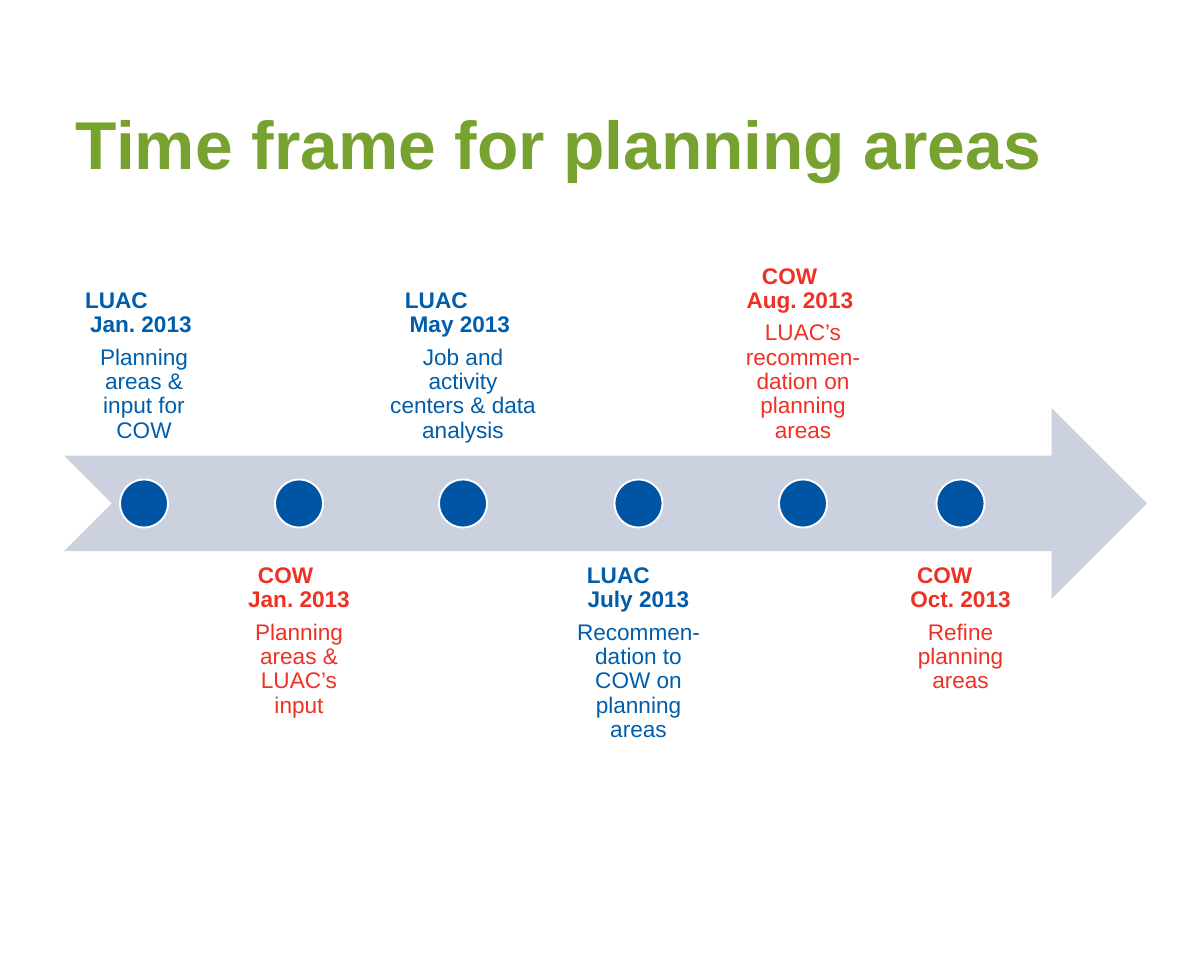
from pptx import Presentation
from pptx.dml.color import RGBColor
from pptx.enum.shapes import MSO_SHAPE
from pptx.enum.text import MSO_ANCHOR, PP_ALIGN
from pptx.util import Pt

PX = 13506  # EMU per px
GREEN = RGBColor(0x78, 0xA2, 0x2F)
BLUE = RGBColor(0x00, 0x5D, 0xAA)
RED = RGBColor(0xEE, 0x31, 0x24)
DOT_BLUE = RGBColor(0x00, 0x54, 0xA4)
PALE = RGBColor(0xCC, 0xD1, 0xE0)
WHITE = RGBColor(0xFF, 0xFF, 0xFF)

ARROW_TOP, ARROW_H, DOT = 408, 191, 48
LABEL_H, ABOVE, BELOW = 191, 265, 551

# left, width, group indent, group, date, task
EVENTS = [
    (65, 158, 7, "LUAC", "Jan. 2013 ", "Planning areas & input for COW"),
    (227, 144, 18, "COW", "Jan. 2013", "Planning areas & LUAC’s input"),
    (376, 174, 16, "LUAC", "May 2013 ", "Job and activity centers & data analysis"),
    (554, 169, 20, "LUAC", "July 2013", "Recommen-dation to COW on planning areas"),
    (728, 150, 21, "COW", "Aug. 2013 ", "LUAC’s recommen-dation on planning areas"),
    (883, 155, 21, "COW", "Oct. 2013", "Refine planning areas"),
]


def add_box(x, y, w, h, inset_x, inset_y):
    tf = s.shapes.add_textbox(x * PX, y * PX, w * PX, h * PX).text_frame
    tf.word_wrap = True
    tf.margin_left = tf.margin_right = inset_x * PX
    tf.margin_top = tf.margin_bottom = inset_y * PX
    return tf


def add_run(p, text, size, color, bold):
    r = p.add_run()
    r.text = text
    r.font.name = "Arial"
    r.font.size = Pt(size)
    r.font.bold = bold
    r.font.color.rgb = color


prs = Presentation()
prs.slide_width, prs.slide_height = 1204 * PX, 963 * PX
s = prs.slides.add_slide(prs.slide_layouts[6])

# Title
tf = add_box(64, 89, 1083, 116, 12, 13)
add_run(tf.paragraphs[0], "Time frame for planning areas", 72, GREEN, True)

# Timeline arrow
arrow = s.shapes.add_shape(MSO_SHAPE.NOTCHED_RIGHT_ARROW,
                           64 * PX, ARROW_TOP * PX, 1083 * PX, ARROW_H * PX)
arrow.shadow.inherit = False
arrow.fill.solid()
arrow.fill.fore_color.rgb = PALE
arrow.line.fill.background()

# Events, alternately above and below the arrow
for i, (x, w, indent, group, date, task) in enumerate(EVENTS):
    above = i % 2 == 0
    color = BLUE if group == "LUAC" else RED
    tf = add_box(x, ABOVE if above else BELOW, w, LABEL_H, 13, 13)
    tf.vertical_anchor = MSO_ANCHOR.BOTTOM if above else MSO_ANCHOR.TOP
    for j, text in enumerate((group, date, task)):
        p = tf.paragraphs[0] if j == 0 else tf.add_paragraph()
        p.line_spacing = 0.9
        p.space_after = Pt(8.4 if j else 0)
        p.alignment = PP_ALIGN.CENTER if j else PP_ALIGN.LEFT
        if j == 0:
            p._p.get_or_add_pPr().set("marL", str(indent * PX))
        add_run(p, text, 24, color, j < 2)

    # Dot centred under or over its label
    dot = s.shapes.add_shape(MSO_SHAPE.OVAL, (2 * x + w - DOT) * PX // 2,
                             (2 * ARROW_TOP + ARROW_H - DOT) * PX // 2,
                             DOT * PX, DOT * PX)
    dot.shadow.inherit = False
    dot.fill.solid()
    dot.fill.fore_color.rgb = DOT_BLUE
    dot.line.color.rgb = WHITE
    dot.line.width = Pt(2)

prs.save("out.pptx")
